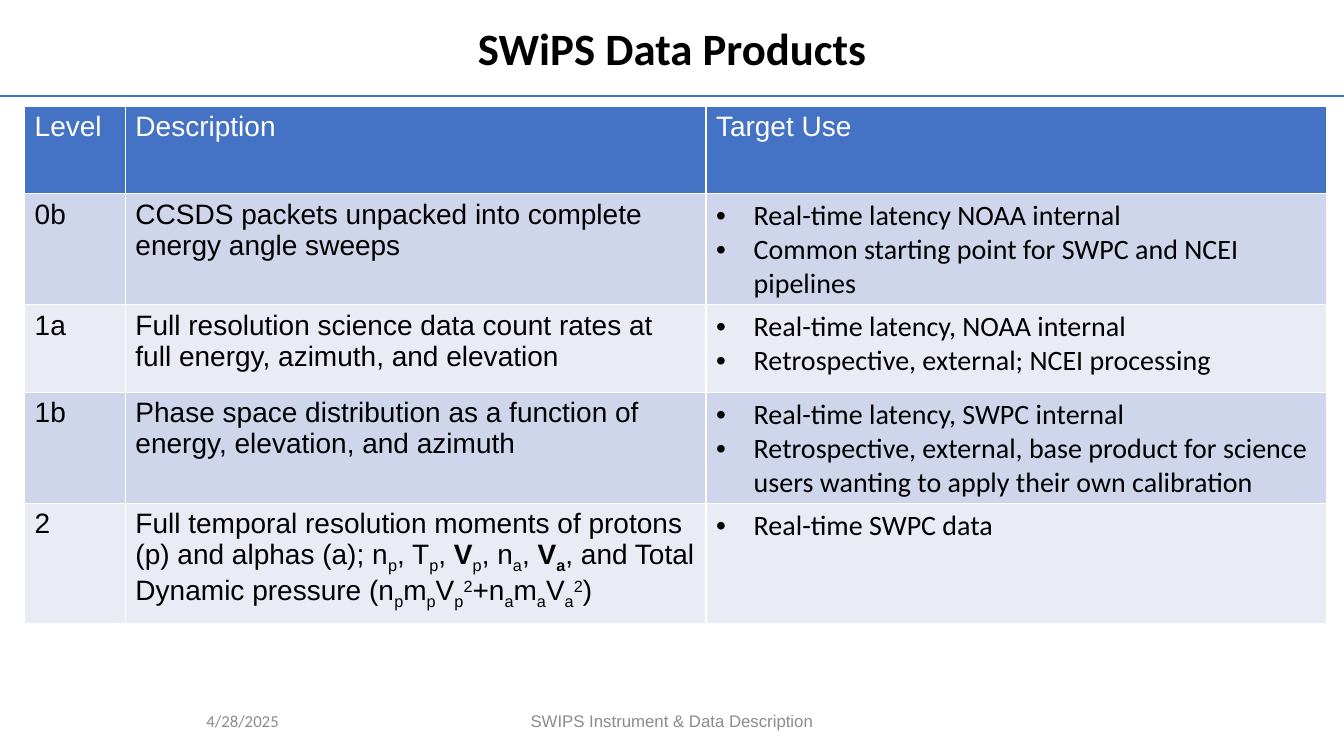
from itertools import groupby

from lxml.etree import SubElement
from pptx import Presentation
from pptx.dml.color import RGBColor
from pptx.enum.shapes import MSO_CONNECTOR
from pptx.enum.text import MSO_ANCHOR, MSO_AUTO_SIZE, PP_ALIGN
from pptx.oxml.ns import qn
from pptx.util import Cm, Pt

BLUE = RGBColor(0x44, 0x72, 0xC4)
BAND_DARK = RGBColor(0xCF, 0xD5, 0xEA)
BAND_LIGHT = RGBColor(0xE9, 0xEB, 0xF5)
BLACK = RGBColor(0, 0, 0)
WHITE = RGBColor(0xFF, 0xFF, 0xFF)
GRAY = RGBColor(0x8C, 0x8C, 0x8C)

SLIDE_WIDTH = Cm(33.87)
HEADINGS = ["Level", "Description", "Target Use"]
COLUMN_WIDTHS = [2.54, 14.63, 15.65]
ROW_HEIGHT = 2.21
# In descriptions, _ lowers, ^ raises and * makes bold the next character.
PRODUCTS = [
    ("0b", "CCSDS packets unpacked into complete energy angle sweeps",
     ["Real-time latency NOAA internal",
      "Common starting point for SWPC and NCEI pipelines"]),
    ("1a", "Full resolution science data count rates at full energy, azimuth, and elevation",
     ["Real-time latency, NOAA internal",
      "Retrospective, external; NCEI processing"]),
    ("1b", "Phase space distribution as a function of energy, elevation, and azimuth",
     ["Real-time latency, SWPC internal",
      "Retrospective, external, base product for science users wanting to "
      "apply their own calibration"]),
    ("2", "Full temporal resolution moments of protons (p) and alphas (a); "
          "n_p, T_p, *V_p, n_a, *V*_a, and Total Dynamic pressure "
          "(n_pm_pV_p^2+n_am_aV_a^2)",
     ["Real-time SWPC data"]),
]


def split_markup(text):
    """Return (text, bold, baseline) pieces of a marked-up string."""
    characters = []
    bold, baseline = False, 0
    for character in text:
        if character == "*":
            bold = True
        elif character == "_":
            baseline = -25000
        elif character == "^":
            baseline = 30000
        else:
            characters.append((character, bold, baseline))
            bold, baseline = False, 0
    return [("".join(item[0] for item in group), *style)
            for style, group in groupby(characters, key=lambda item: item[1:])]


class SlideBuilder:
    """Holds the text style and the current slide."""

    def __init__(self, presentation):
        self.slide = presentation.slides.add_slide(presentation.slide_layouts[5])
        self.body_font = "Arial"
        self.accent_font = "Calibri"
        self.table_size = 20

    def format_run(self, run, font, size, color, bold=False):
        run.font.name = font
        run.font.size = Pt(size)
        run.font.color.rgb = color
        run.font.bold = bold

    def title(self, text, left, top, width, height):
        title = self.slide.shapes.title
        title.left, title.top, title.width, title.height = map(Cm, (left, top, width, height))
        frame = title.text_frame
        frame.text = text
        frame.auto_size = MSO_AUTO_SIZE.NONE
        frame.vertical_anchor = MSO_ANCHOR.MIDDLE
        paragraph = frame.paragraphs[0]
        paragraph.alignment = PP_ALIGN.CENTER
        paragraph.line_spacing = 0.9
        self.format_run(paragraph.runs[0], self.accent_font, 32, BLACK, bold=True)

    def rule(self, top):
        line = self.slide.shapes.add_connector(
            MSO_CONNECTOR.STRAIGHT, 0, Cm(top), SLIDE_WIDTH, Cm(top))
        line.line.color.rgb = BLUE
        line.line.width = Pt(1.5)
        SubElement(line._element.spPr, qn("a:effectLst"))

    def footer(self, text, left, width, font, alignment):
        box = self.slide.shapes.add_textbox(Cm(left), Cm(17.65), Cm(width), Cm(1.01))
        frame = box.text_frame
        frame.text = text
        frame.word_wrap = True
        frame.vertical_anchor = MSO_ANCHOR.MIDDLE
        frame.paragraphs[0].alignment = alignment
        self.format_run(frame.paragraphs[0].runs[0], font, 12, GRAY)

    def cell_text(self, cell, text, color, fill):
        cell.fill.solid()
        cell.fill.fore_color.rgb = fill
        paragraph = cell.text_frame.paragraphs[0]
        for piece, bold, baseline in split_markup(text):
            run = paragraph.add_run()
            run.text = piece
            self.format_run(run, self.body_font, self.table_size, color, bold)
            if baseline:
                run.font._element.set("baseline", str(baseline))

    def cell_bullets(self, cell, items, fill):
        cell.fill.solid()
        cell.fill.fore_color.rgb = fill
        cell.text_frame.text = "\n".join(items)
        for paragraph in cell.text_frame.paragraphs:
            properties = paragraph._p.get_or_add_pPr()
            properties.set("marL", str(Cm(0.95)))
            properties.set("indent", str(-Cm(0.95)))
            SubElement(properties, qn("a:buFont"), typeface="Arial")
            SubElement(properties, qn("a:buChar"), char="•")
            self.format_run(paragraph.runs[0], self.accent_font, self.table_size, BLACK)

    def product_table(self, left, top):
        row_count = len(PRODUCTS) + 1
        table = self.slide.shapes.add_table(
            row_count, len(HEADINGS), Cm(left), Cm(top),
            Cm(sum(COLUMN_WIDTHS)), Cm(ROW_HEIGHT * row_count)).table
        for column, width in zip(table.columns, COLUMN_WIDTHS):
            column.width = Cm(width)
        for row in table.rows:
            row.height = Cm(ROW_HEIGHT)
        for index, heading in enumerate(HEADINGS):
            self.cell_text(table.cell(0, index), heading, WHITE, BLUE)
        for row, (level, description, uses) in enumerate(PRODUCTS, start=1):
            fill = BAND_DARK if row % 2 else BAND_LIGHT
            self.cell_text(table.cell(row, 0), level, BLACK, fill)
            self.cell_text(table.cell(row, 1), description, BLACK, fill)
            self.cell_bullets(table.cell(row, 2), uses, fill)


def main():
    presentation = Presentation()
    presentation.slide_width = SLIDE_WIDTH
    presentation.slide_height = Cm(19.05)
    builder = SlideBuilder(presentation)
    builder.rule(2.41)
    builder.title("SWiPS Data Products", 7.24, 0.18, 19.4, 2.23)
    builder.footer("SWIPS Instrument & Data Description", 11.22, 11.43,
                   builder.body_font, PP_ALIGN.CENTER)
    builder.product_table(0.62, 2.67)
    builder.footer("4/28/2025", 4.95, 5.41, builder.accent_font, PP_ALIGN.LEFT)
    presentation.save("out.pptx")


if __name__ == "__main__":
    main()
